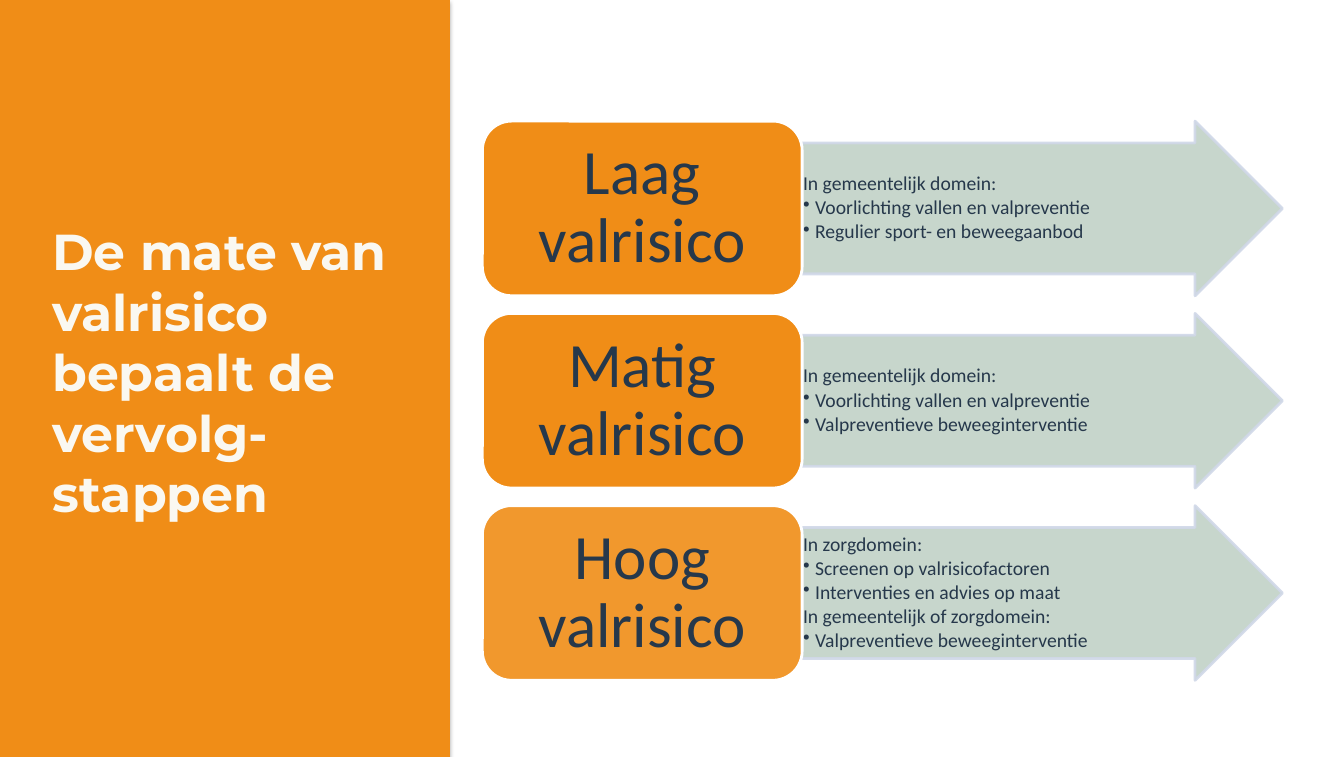
from dataclasses import dataclass

from lxml import etree
from pptx import Presentation, util as u
from pptx.dml import color
from pptx.enum import shapes, text
from pptx.oxml import ns


@dataclass(frozen=True)
class Theme:
    """Colours, fonts and type sizes of the slide."""
    orange: str = "F08D17"
    sage: str = "C2D2C7"
    outline: str = "D0D8E8"
    white: str = "FFFFFF"
    cream: str = "FAF8F1"
    ink: str = "26384B"
    title_font: str = "Montserrat"
    body_font: str = "Calibri"
    title_size: int = 36
    label_size: int = 45
    body_size: int = 14


THEME = Theme()
WIDTH, HEIGHT = u.Inches(13.32), u.Inches(7.5)
FIRST_ROW, ROW_STEP, ROW_HEIGHT = 16, 25.4, 23.07
LABEL_COLUMN, LABEL_WIDTH = 35.89, 23.79
ARROW_COLUMN, ARROW_WIDTH = 59.68, 35.74
RISKS = [
    ("Laag valrisico", 100, [
        ("In gemeentelijk domein:", False),
        ("Voorlichting vallen en valpreventie", True),
        ("Regulier sport- en beweegaanbod", True)]),
    ("Matig valrisico", 100, [
        ("In gemeentelijk domein:", False),
        ("Voorlichting vallen en valpreventie", True),
        ("Valpreventieve beweeginterventie", True)]),
    ("Hoog valrisico", 90, [
        ("In zorgdomein:", False),
        ("Screenen op valrisicofactoren", True),
        ("Interventies en advies op maat", True),
        ("In gemeentelijk of zorgdomein:", False),
        ("Valpreventieve beweeginterventie", True)]),
]


def place(left, top, width, height):
    """Turn percentages of the slide into lengths."""
    return (int(WIDTH * left / 100), int(HEIGHT * top / 100),
            int(WIDTH * width / 100), int(HEIGHT * height / 100))


def apply(target, **values):
    """Set every given format value on the target."""
    for name, value in values.items():
        setattr(target, name, value)


def add_element(parent, tag, **attributes):
    """Append a drawing element with the given attributes."""
    element = etree.SubElement(parent, ns.qn(tag))
    for name, value in attributes.items():
        element.set(name, str(value))
    return element


def paint(fill, rgb, opacity=100):
    """Fill with a solid colour at a percentage of opacity."""
    fill.solid()
    fill.fore_color.rgb = color.RGBColor.from_string(rgb)
    if opacity < 100:
        tint = fill._xPr.find(ns.qn("a:solidFill"))[0]
        add_element(tint, "a:alpha", val=opacity * 1000)


def add_block(container, kind, box, rgb, opacity=100, line=None, line_opacity=100):
    """Add a filled preset shape, outlined if a line colour is given."""
    shape = container.add_shape(kind, *box)
    shape.shadow.inherit = False
    paint(shape.fill, rgb, opacity)
    if line:
        paint(shape.line.fill, line, line_opacity)
        shape.line.width = u.Pt(2)
    else:
        shape.line.fill.background()
    return shape


def set_frame(shape, horizontal, vertical):
    """Prepare a wrapping, vertically centred frame with inch margins."""
    frame = shape.text_frame
    apply(frame, word_wrap=True, vertical_anchor=text.MSO_ANCHOR.MIDDLE,
          margin_left=u.Inches(horizontal), margin_right=u.Inches(horizontal),
          margin_top=u.Inches(vertical), margin_bottom=u.Inches(vertical))
    return frame


def write(paragraph, words, size, rgb, font, bold=False, **layout):
    """Write one formatted run into a paragraph."""
    apply(paragraph, **layout)
    run = paragraph.add_run()
    run.text = words
    apply(run.font, size=u.Pt(size), name=font, bold=bold)
    run.font.color.rgb = color.RGBColor.from_string(rgb)


def hang(paragraph, bulleted):
    """Give a paragraph a hanging indent, with or without a bullet."""
    properties = paragraph._p.get_or_add_pPr()
    properties.set("marL", str(u.Inches(0.12)))
    properties.set("indent", str(-u.Inches(0.12)))
    if bulleted:
        add_element(properties, "a:buChar", char="•")
    else:
        add_element(properties, "a:buNone")


def add_title_panel(slide):
    """Add the orange panel with its soft shadow and the slide title."""
    panel = add_block(slide.shapes, shapes.MSO_SHAPE.RECTANGLE,
                      place(0, 0, 33.48, 100), THEME.orange)
    effects = panel._element.spPr.find(ns.qn("a:effectLst"))
    shadow = add_element(effects, "a:outerShdw", blurRad=u.Pt(3), dist=u.Pt(1.8),
                         dir=90 * 60000, rotWithShape=0)
    black = add_element(shadow, "a:srgbClr", val="000000")
    add_element(black, "a:alpha", val=35000)
    title = slide.shapes.add_textbox(*place(3.15, 17.6, 27.85, 62.93))
    write(set_frame(title, 0.1, 0.05).paragraphs[0],
          "De mate van valrisico bepaalt de vervolg-stappen",
          THEME.title_size, THEME.cream, THEME.title_font, bold=True)


def add_arrow(container, top, steps):
    """Add an arrow that lists the follow-up steps."""
    arrow = add_block(container, shapes.MSO_SHAPE.RIGHT_ARROW,
                      place(ARROW_COLUMN, top, ARROW_WIDTH, ROW_HEIGHT),
                      THEME.sage, 90, THEME.outline, 90)
    arrow.adjustments[0] = 0.75
    frame = set_frame(arrow, 0.01, 0.01)
    for index, (words, bulleted) in enumerate(steps):
        paragraph = frame.add_paragraph() if index else frame.paragraphs[0]
        hang(paragraph, bulleted)
        write(paragraph, words, THEME.body_size, THEME.ink, THEME.body_font,
              level=1, alignment=text.PP_ALIGN.LEFT, line_spacing=0.9,
              space_after=u.Pt(2.1))


def add_label(container, top, words, opacity):
    """Add the rounded label that names a risk level."""
    label = add_block(container, shapes.MSO_SHAPE.ROUNDED_RECTANGLE,
                      place(LABEL_COLUMN, top, LABEL_WIDTH, ROW_HEIGHT),
                      THEME.orange, opacity, THEME.white)
    write(set_frame(label, 0.19, 0.09).paragraphs[0], words,
          THEME.label_size, THEME.ink, THEME.body_font,
          alignment=text.PP_ALIGN.CENTER, line_spacing=0.9)


def main():
    """Build the slide and save it."""
    presentation = Presentation()
    apply(presentation, slide_width=WIDTH, slide_height=HEIGHT)
    slide = presentation.slides.add_slide(presentation.slide_layouts[6])
    add_title_panel(slide)
    diagram = slide.shapes.add_group_shape().shapes
    for row, (risk, opacity, steps) in enumerate(RISKS):
        top = FIRST_ROW + row * ROW_STEP
        add_arrow(diagram, top, steps)
        add_label(diagram, top, risk, opacity)
    presentation.save("out.pptx")


if __name__ == "__main__":
    main()
